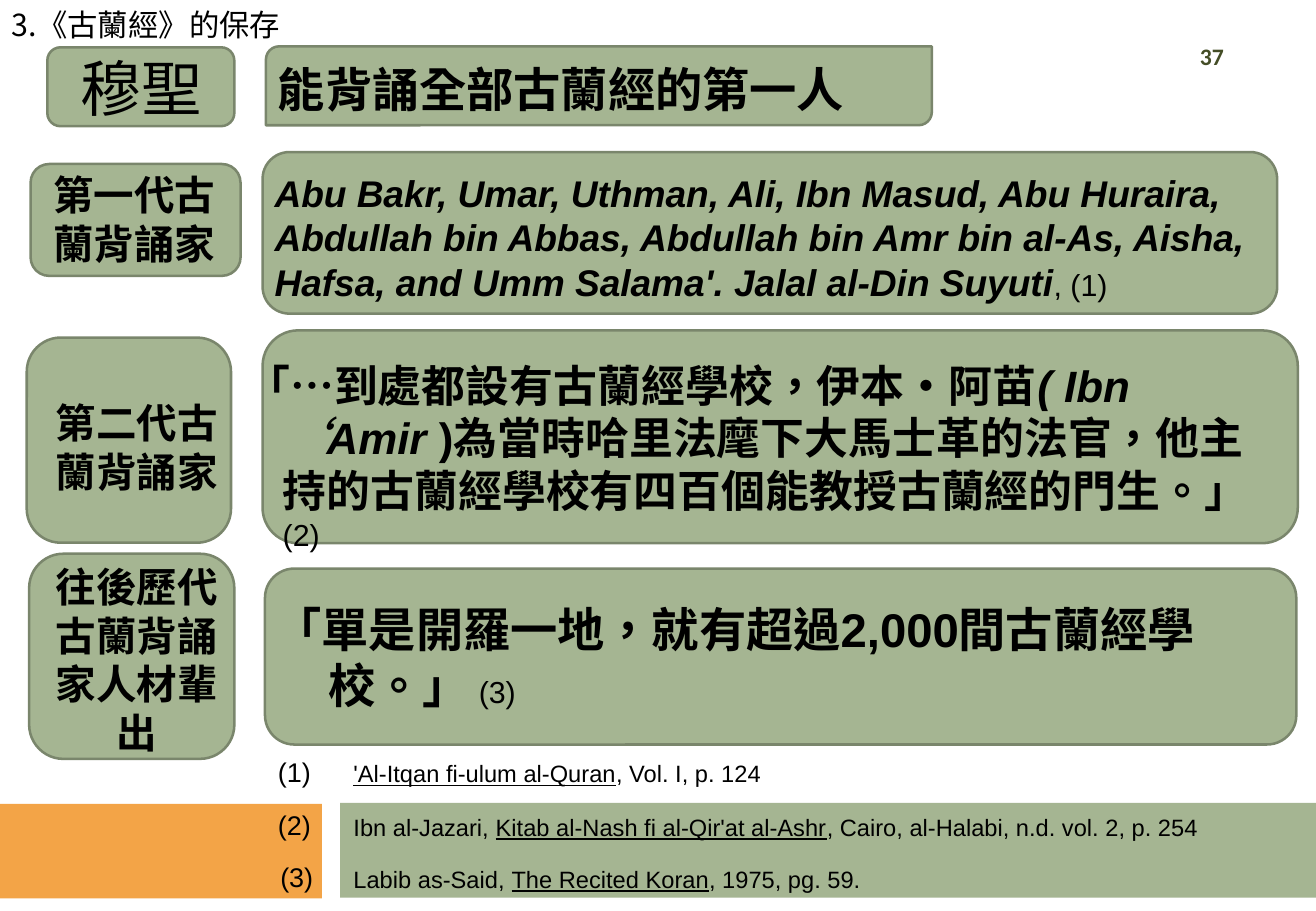
import pptx
import pptx.dml.color
import pptx.enum.lang
import pptx.enum.shapes
import pptx.enum.text
import pptx.util
from pptx.util import Cm

COLORS = {"sage": "A5B592", "edge": "7A866C", "orange": "F3A447",
          "olive": "444D26", "black": "000000"}
CJK = "Noto Sans CJK SC"
CENTER = pptx.enum.text.PP_ALIGN.CENTER
SHAPES = pptx.enum.shapes.MSO_SHAPE

deck = pptx.Presentation()
deck.slide_width, deck.slide_height = Cm(27.51), Cm(19.05)
page = deck.slides.add_slide(deck.slide_layouts[6])


def add_panel(kind, place, fill, edge=None):
    panel = page.shapes.add_shape(kind, *[Cm(length) for length in place])
    panel.shadow.inherit = False
    panel.fill.solid()
    panel.fill.fore_color.rgb = pptx.dml.color.RGBColor.from_string(COLORS[fill])
    if edge:
        panel.line.color.rgb = pptx.dml.color.RGBColor.from_string(COLORS[edge])
        panel.line.width = pptx.util.Pt(1.5)
    else:
        panel.line.fill.background()


def add_text(place, paragraphs, base, align=None, hanging=0, color="black"):
    """Each paragraph is a list of (text, format changes) pairs."""
    box = page.shapes.add_textbox(*[Cm(length) for length in place])
    frame = box.text_frame
    frame.word_wrap = True
    for index, pieces in enumerate(paragraphs):
        para = frame.paragraphs[0] if index == 0 else frame.add_paragraph()
        para.alignment = align
        if hanging:
            properties = para._p.get_or_add_pPr()
            properties.set("marL", str(Cm(hanging)))
            properties.set("indent", str(-Cm(hanging)))
        for text, changes in pieces:
            span = para.add_run()
            span.text = text
            values = {"name": "Arial", **base, **changes}
            values["size"] = pptx.util.Pt(values["size"])
            for name, value in values.items():
                setattr(span.font, name, value)
            span.font.language_id = pptx.enum.lang.MSO_LANGUAGE_ID.TRADITIONAL_CHINESE
            span.font.color.rgb = pptx.dml.color.RGBColor.from_string(COLORS[color])
            east_asian = pptx.oxml.parse_xml(
                '<a:ea xmlns:a="http://schemas.openxmlformats.org/drawingml/2006/main"'
                f' typeface="{CJK}"/>')
            span.font._element.find(pptx.oxml.ns.qn("a:latin")).addnext(east_asian)
    return frame


# Footer bars
add_panel(SHAPES.RECTANGLE, (-0.03, 16.81, 6.76, 1.98), "orange")
add_panel(SHAPES.RECTANGLE, (7.11, 16.79, 20.42, 1.98), "sage")

# Panels: generation on the left, account on the right
for place in [
    (0.99, 0.99, 3.91, 1.65),
    (0.64, 3.43, 4.39, 2.34), (5.49, 3.18, 21.21, 3.38),
    (0.56, 7.06, 4.27, 4.29), (5.49, 6.91, 21.64, 4.45),
    (0.61, 11.58, 4.29, 4.29), (5.54, 11.89, 21.56, 3.68),
]:
    add_panel(SHAPES.ROUNDED_RECTANGLE, place, "sage", "edge")
add_panel(SHAPES.ROUND_2_DIAG_RECTANGLE, (5.56, 0.97, 13.92, 1.65), "sage", "edge")

# Heading and page number
add_text((0, 0, 6.93, 1.02), [[("3.《古蘭經》的保存", {})]], {"size": 18, "name": CJK})
number = add_text((24.08, 0.64, 2.51, 1.07), [[("37", {})]],
                  {"size": 14, "bold": True, "name": "Calibri"}, CENTER, color="olive")
number.vertical_anchor = pptx.enum.text.MSO_ANCHOR.MIDDLE

# Generation labels
add_text((0.97, 0.94, 3.96, 1.8), [[("穆聖", {})]], {"size": 36, "name": CJK}, CENTER)
for place, lines in [
    ((0.66, 3.43, 4.29, 2.31), ["第一代古蘭背誦家"]),
    ((0.71, 8.2, 4.29, 2.31), ["第二代古蘭背誦家"]),
    ((0.61, 11.63, 4.5, 4.37), ["往後歷代", "古蘭背誦家人材輩出"]),
]:
    add_text(place, [[(line, {})] for line in lines], {"size": 24, "bold": True}, CENTER)

# Accounts
small = {"size": 18, "bold": False, "italic": False}
add_text((5.56, 1.14, 13.72, 1.45), [[("能背誦全部古蘭經的第一人", {})]],
         {"size": 28, "bold": True})
add_text((5.49, 3.43, 21.21, 3.07), [[
    ("Abu Bakr, Umar, Uthman, Ali, Ibn Masud, Abu Huraira, Abdullah bin Abbas, "
     "Abdullah bin Amr bin al-As, Aisha, Hafsa, and Umm Salama'. Jalal al-Din Suyuti",
     {"italic": True}),
    (", (1)", small)]], {"size": 22, "bold": True})
add_text((4.9, 7.37, 21.82, 3.58), [[
    ("「…到處都設有古蘭經學校，伊本‧阿苗", {}),
    ("( Ibn ‘Amir ", {"italic": True}),
    (")為當時哈里法麾下大馬士革的法官，他主持的古蘭經學校有四百個能教授古蘭經的門生。」 ", {}),
    ("(2)", small)]], {"size": 26, "bold": True}, hanging=0.76)
add_text((5.49, 12.42, 21.62, 2.64), [[
    ("「單是開羅一地，就有超過2,000間古蘭經學校。」", {}),
    (" ", {"size": 24, "bold": False}),
    ("(3)", small)]], {"size": 28, "bold": True}, hanging=1.12)

# References
title = {"underline": True}
for mark, left, top, width, pieces in [
    ("(1)", 5.56, 15.67, 11,
     [("'Al-Itqan fi-ulum al-Quran", title), (", Vol. I, p. 124", {})]),
    ("(2)", 5.56, 16.79, 20.37,
     [("Ibn al-Jazari, ", {}), ("Kitab al-Nash fi al-Qir'at al-Ashr", title),
      (", Cairo, al-Halabi, n.d. vol. 2, p. 254", {})]),
    ("(3)", 5.61, 17.88, 20.37,
     [("Labib as-Said, ", {}), ("The Recited Koran", title), (", 1975, pg. 59.", {})]),
]:
    add_text((left, top, 1.19, 0.94), [[(mark, {})]], {"size": 16})
    add_text((7.14, top + 0.08, width, 0.86), [pieces], {"size": 14})

deck.save("out.pptx")
